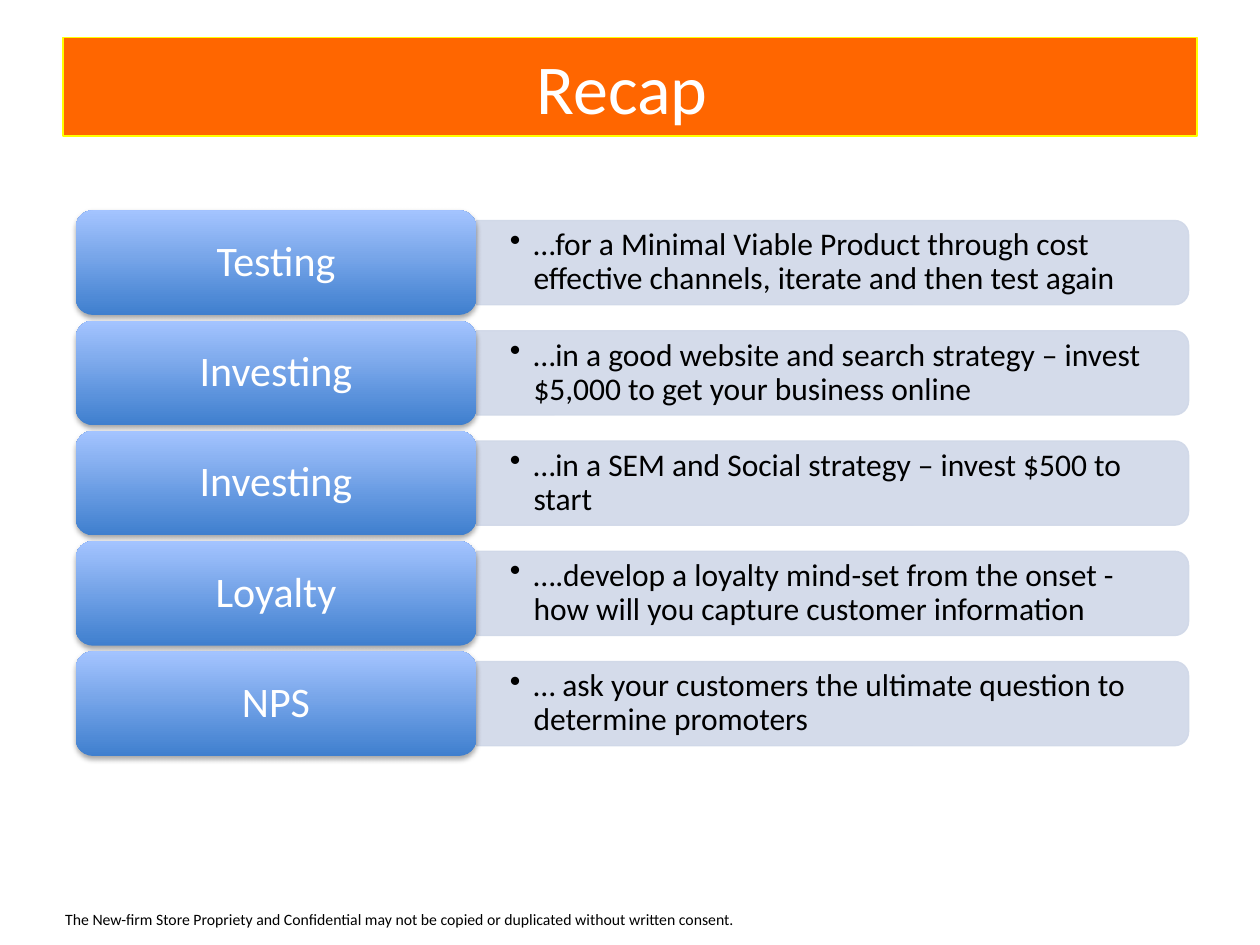
from lxml.etree import SubElement
from pptx import Presentation
from pptx.dml.color import RGBColor
from pptx.enum.shapes import MSO_SHAPE as Preset
from pptx.enum.text import MSO_ANCHOR as Anchor, MSO_AUTO_SIZE as AutoSize, PP_ALIGN as Align
from pptx.oxml.ns import qn
from pptx.util import Pt

TITLE = "Recap "
NOTICE = ("The New-firm Store Propriety and Confidential may not be copied "
          "or duplicated without written consent.")
ROWS = [
    ("Testing", "…for a Minimal Viable Product through cost effective channels, iterate and then test again"),
    ("Investing", "…in a good website and search strategy – invest $5,000 to get your business online"),
    ("Investing", "…in a SEM and Social strategy – invest $500 to start"),
    ("Loyalty", "….develop a loyalty mind-set from the onset -  how will you capture customer information"),
    ("NPS", "… ask your customers the ultimate question to determine promoters"),
]
FONT = "Calibri"
ORANGE, YELLOW, WHITE, BLACK = "FF6600", "FFFF00", "FFFFFF", "000000"
PALE, CARD_BOTTOM, CARD_TOP = "D0D8E8", "3F7FCE", "A4C4FF"
LEFT, TOP, PITCH = 43.2, 120.2, 63
CARD_W, CARD_H = 229, 59.8
BAR_W, BAR_H = 407, 48.2


def rgb(code):
    return RGBColor.from_string(code)


def box(x, y, w, h):
    return Pt(x), Pt(y), Pt(w), Pt(h)


def write(shape, words, size, color, align=Align.LEFT, spacing=None, anchor=Anchor.MIDDLE):
    frame = shape.text_frame
    frame.word_wrap = True
    frame.vertical_anchor = anchor
    paragraph = frame.paragraphs[0]
    paragraph.alignment = align
    paragraph.line_spacing = spacing
    run = paragraph.add_run()
    run.text = words
    run.font.name, run.font.size = FONT, Pt(size)
    run.font.color.rgb = rgb(color)
    return paragraph


def set_alpha(parent, percent):
    for color in parent.iter(qn("a:srgbClr")):
        SubElement(color, qn("a:alpha"), val=str(percent * 1000))


def add_bar(shapes, middle):
    x = LEFT + CARD_W + (BAR_W - BAR_H) / 2
    bar = shapes.add_shape(Preset.ROUND_2_SAME_RECTANGLE, *box(x, middle - BAR_W / 2, BAR_H, BAR_W))
    bar.rotation = 90
    bar.shadow.inherit = False
    bar.fill.solid()
    bar.fill.fore_color.rgb = bar.line.color.rgb = rgb(PALE)
    bar.line.width = Pt(0.75)
    set_alpha(bar.element.spPr, 90)


def add_advice(shapes, middle, words):
    advice = shapes.add_textbox(*box(LEFT + CARD_W, middle - 21.6, BAR_W - 2, 43.2))
    frame = advice.text_frame
    frame.margin_left = frame.margin_right = Pt(19.2)
    frame.margin_top = frame.margin_bottom = 0
    paragraph = write(advice, words, 18, BLACK, spacing=0.9)
    props = paragraph._p.get_or_add_pPr()
    props.set("marL", str(Pt(13.5)))
    props.set("indent", str(Pt(-13.5)))
    SubElement(props, qn("a:buChar"), char="•")


def add_card(shapes, middle, label):
    card = shapes.add_shape(Preset.ROUNDED_RECTANGLE, *box(LEFT, middle - CARD_H / 2, CARD_W, CARD_H))
    card.fill.gradient()
    card.fill.gradient_angle = 90
    for stop, color in zip(card.fill.gradient_stops, (CARD_BOTTOM, CARD_TOP)):
        stop.color.rgb = rgb(color)
    card.line.fill.background()
    card.shadow.inherit = False
    effects = card.element.spPr.find(qn("a:effectLst"))
    shadow = SubElement(effects, qn("a:outerShdw"), blurRad=str(Pt(3.1)), dist=str(Pt(1.8)),
                        dir="5400000", rotWithShape="0")
    SubElement(shadow, qn("a:srgbClr"), val=BLACK)
    set_alpha(shadow, 35)
    write(card, label, 24, WHITE, Align.CENTER, 0.9)


def main():
    """Build the recap slide and save it."""
    deck = Presentation()
    deck.slide_width, deck.slide_height = Pt(720), Pt(540)
    slide = deck.slides.add_slide(deck.slide_layouts[5])

    title = slide.shapes.title
    title.left, title.top, title.width, title.height = box(36, 21.6, 648, 56.2)
    title.fill.solid()
    title.fill.fore_color.rgb = rgb(ORANGE)
    title.line.color.rgb = rgb(YELLOW)
    title.line.width = Pt(0.75)
    write(title, TITLE, 40, WHITE, Align.CENTER)

    notice = slide.shapes.add_textbox(*box(30.2, 516.2, 498.2, 18))
    write(notice, NOTICE, 9, BLACK, anchor=Anchor.TOP)
    notice.text_frame.auto_size = AutoSize.SHAPE_TO_FIT_TEXT

    recap = slide.shapes.add_group_shape().shapes
    for index, (label, words) in enumerate(ROWS):
        middle = TOP + CARD_H / 2 + index * PITCH
        add_bar(recap, middle)
        add_advice(recap, middle, words)
        add_card(recap, middle, label)

    deck.save("out.pptx")


if __name__ == "__main__":
    main()
